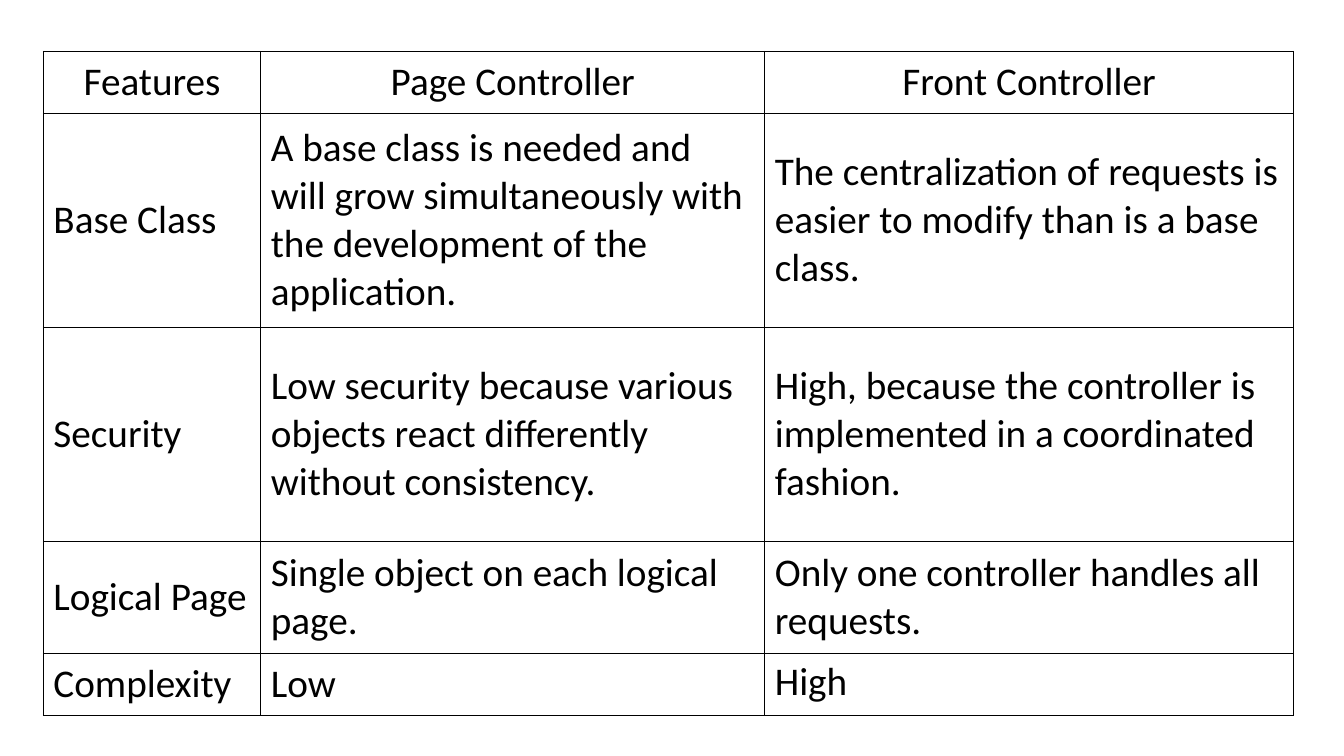
from lxml import etree
from pptx import Presentation
from pptx import util as u
from pptx.dml import color
from pptx.enum import text
from pptx.oxml import ns

COLORS = {"ink": "000000"}
COLUMN_WIDTHS = [155.3, 360, 377.5]
ROW_HEIGHTS = [44.2, 152.8, 152.8, 80.3, 44.2]
ROWS = [
    ("Features", "Page Controller", "Front Controller"),
    ("Base Class",
     "A base class is needed and will grow simultaneously with the development of the application.",
     "The centralization of requests is easier to modify than is a base class."),
    ("Security",
     "Low security because various objects react differently without consistency.",
     "High, because the controller is implemented in a coordinated fashion."),
    ("Logical Page",
     "Single object on each logical page.",
     "Only one controller handles all requests."),
    ("Complexity", "Low", "High"),
]


def add_borders(cell):
    properties = cell._tc.get_or_add_tcPr()
    for position, side in enumerate(("lnL", "lnR", "lnT", "lnB")):
        line = etree.Element(ns.qn(f"a:{side}"), w=str(u.Pt(1)))
        fill = etree.SubElement(line, ns.qn("a:solidFill"))
        etree.SubElement(fill, ns.qn("a:srgbClr"), val=COLORS["ink"])
        properties.insert(position, line)


presentation = Presentation()
presentation.slide_width = u.Pt(960)
presentation.slide_height = u.Pt(540)
slide = presentation.slides.add_slide(presentation.slide_layouts[6])

# Comparison table
table = slide.shapes.add_table(
    len(ROWS), len(COLUMN_WIDTHS), u.Pt(31), u.Pt(36.8),
    u.Pt(sum(COLUMN_WIDTHS)), u.Pt(sum(ROW_HEIGHTS))).table
table.horz_banding = False
for column, width in zip(table.columns, COLUMN_WIDTHS):
    column.width = u.Pt(width)
for row, height in zip(table.rows, ROW_HEIGHTS):
    row.height = u.Pt(height)

# Cell text, fill and borders
for row_index, row_texts in enumerate(ROWS):
    for column_index, cell_text in enumerate(row_texts):
        cell = table.cell(row_index, column_index)
        cell.text = cell_text
        cell.fill.background()
        cell.vertical_anchor = text.MSO_ANCHOR.MIDDLE
        add_borders(cell)
        paragraph = cell.text_frame.paragraphs[0]
        paragraph.alignment = text.PP_ALIGN.LEFT if row_index else text.PP_ALIGN.CENTER
        paragraph.font.name = "Calibri"
        paragraph.font.size = u.Pt(28)
        paragraph.font.bold = False
        paragraph.font.color.rgb = color.RGBColor.from_string(COLORS["ink"])

# The last cell sits at the top of its row
table.cell(len(ROWS) - 1, len(COLUMN_WIDTHS) - 1).vertical_anchor = text.MSO_ANCHOR.TOP

presentation.save("out.pptx")
